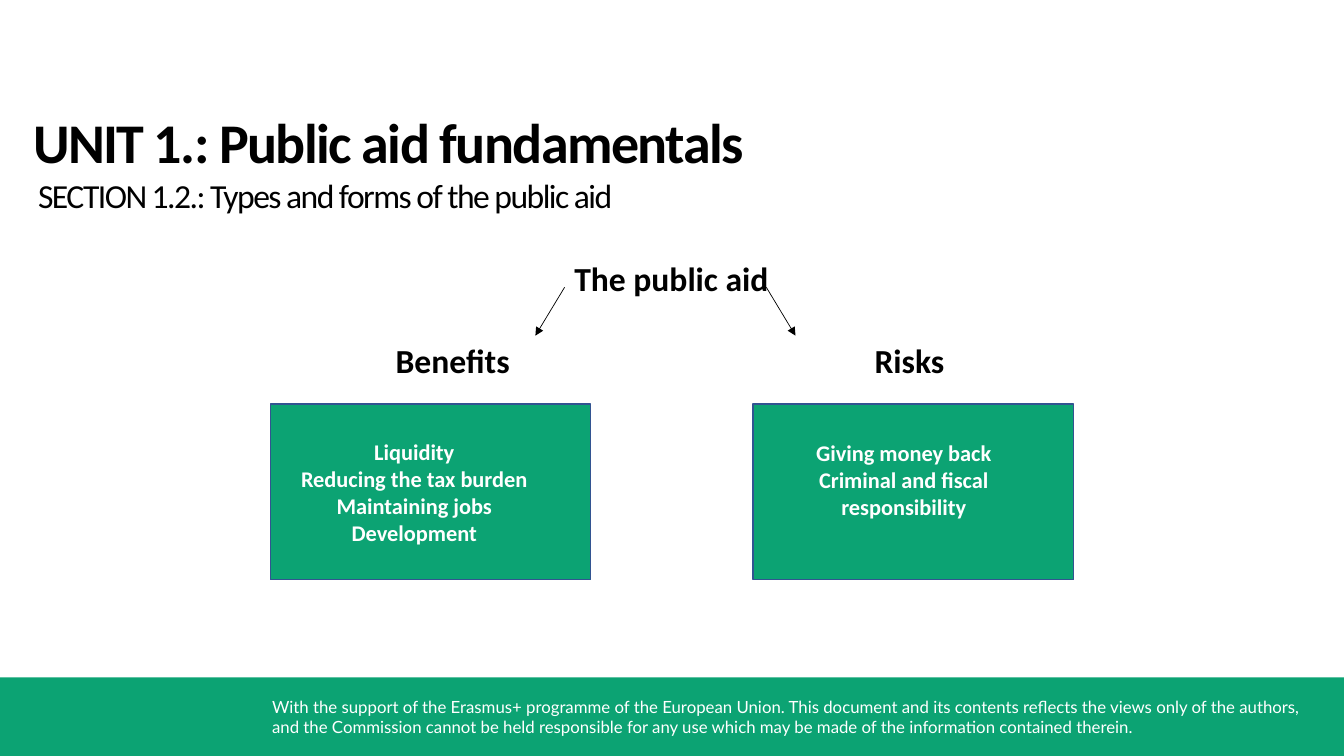
from pptx import Presentation
from pptx.dml.color import RGBColor
from pptx.enum.shapes import MSO_CONNECTOR, MSO_SHAPE
from pptx.enum.text import MSO_ANCHOR, PP_ALIGN
from pptx.oxml.ns import qn
from pptx.util import Inches, Pt
from lxml import etree

GREEN = RGBColor(0x0C, 0xA3, 0x73)
BLUE = RGBColor(0x32, 0x54, 0x91)
BLACK = RGBColor(0, 0, 0)
WHITE = RGBColor(0xFF, 0xFF, 0xFF)

FOOTER = ("With the support of the Erasmus+ programme of the European Union. "
          "This document and its contents reflects the views only of the authors, "
          "and the Commission cannot be held responsible for any use which may be "
          "made of the information contained therein.")
BENEFITS = ["Liquidity", "Reducing the tax burden", "Maintaining jobs", "Development"]
RISKS = ["Giving money back", "Criminal and fiscal", "responsibility"]


def style(para, size, color, bold=False, font="Calibri", align=PP_ALIGN.LEFT, spacing=0):
    para.alignment = align
    for span in para.runs:
        span.font.name = font
        span.font.size = Pt(size)
        span.font.bold = bold
        span.font.color.rgb = color
        if spacing:
            span.font._element.set("spc", str(round(spacing * 100)))


def add_text(page, left, top, width, height, text):
    box = page.shapes.add_textbox(Inches(left), Inches(top), Inches(width), Inches(height))
    box.text_frame.word_wrap = True
    box.text_frame.text = text
    return box.text_frame.paragraphs


def add_rectangle(page, left, top, width, height):
    rectangle = page.shapes.add_shape(
        MSO_SHAPE.RECTANGLE, Inches(left), Inches(top), Inches(width), Inches(height))
    rectangle.shadow.inherit = False
    rectangle.fill.solid()
    rectangle.fill.fore_color.rgb = GREEN
    return rectangle


def add_footer(page, left, top, width, height):
    band = add_rectangle(page, left, top, width, height)
    band.line.fill.background()
    note = add_text(page, left + 2.6, top + 0.14, 10.42, 0.5, FOOTER)
    style(note[0], 12, WHITE, font="Lato")


def add_heading(page, left, top, width, height):
    title, section = add_text(
        page, left, top, width, height,
        "UNIT 1.: Public aid fundamentals\nSECTION 1.2.: Types and forms of the public aid")
    section._p.get_or_add_pPr().set("marL", str(Inches(0.05)))
    style(title, 40, BLACK, bold=True, spacing=-1.1)
    style(section, 24, BLACK, spacing=-1.1)


def add_label(page, center, top, text):
    width = 3
    label = add_text(page, center - width / 2, top, width, 0.5, text)
    style(label[0], 24, BLACK, bold=True, align=PP_ALIGN.CENTER)


def add_arrow(page, start_x, start_y, end_x, end_y):
    arrow = page.shapes.add_connector(
        MSO_CONNECTOR.STRAIGHT, Inches(start_x), Inches(start_y), Inches(end_x), Inches(end_y))
    arrow.line.color.rgb = BLACK
    arrow.line.width = Pt(0.5)
    etree.SubElement(arrow.line._get_or_add_ln(), qn("a:tailEnd"), type="triangle")
    etree.SubElement(arrow._element.spPr, qn("a:effectLst"))


def add_branch(page, left, top, width, height, items, right_inset, bottom_inset):
    card = add_rectangle(page, left, top, width, height)
    card.line.color.rgb = BLUE
    card.line.width = Pt(1)
    frame = card.text_frame
    frame.word_wrap = True
    frame.vertical_anchor = MSO_ANCHOR.MIDDLE
    frame.margin_right = Inches(right_inset)
    frame.margin_bottom = Inches(bottom_inset)
    frame.text = "\n".join(items)
    for para in frame.paragraphs:
        style(para, 16, WHITE, bold=True, align=PP_ALIGN.CENTER)


def add_diagram(page, left, top):
    # Root and branch labels
    add_label(page, left + 3.98, top, "The public aid")
    add_label(page, left + 1.81, top + 0.81, "Benefits")
    add_label(page, left + 6.34, top + 0.81, "Risks")
    # Branch cards
    add_branch(page, left, top + 1.5, 3.18, 1.74, BENEFITS, 0.42, 0.05)
    add_branch(page, left + 4.79, top + 1.5, 3.18, 1.74, RISKS, 0.29, 0.3)
    # Arrows from the root to each branch
    add_arrow(page, left + 2.92, top + 0.34, left + 2.63, top + 0.82)
    add_arrow(page, left + 4.92, top + 0.34, left + 5.21, top + 0.82)


def main():
    deck = Presentation()
    deck.slide_width = Inches(13.33)
    deck.slide_height = Inches(7.5)
    page = deck.slides.add_slide(deck.slide_layouts[6])
    add_footer(page, 0, 6.72, 13.33, 0.78)
    add_heading(page, 0.23, 1.02, 12.93, 1.2)
    add_diagram(page, 2.68, 2.51)
    deck.save("out.pptx")


if __name__ == "__main__":
    main()
